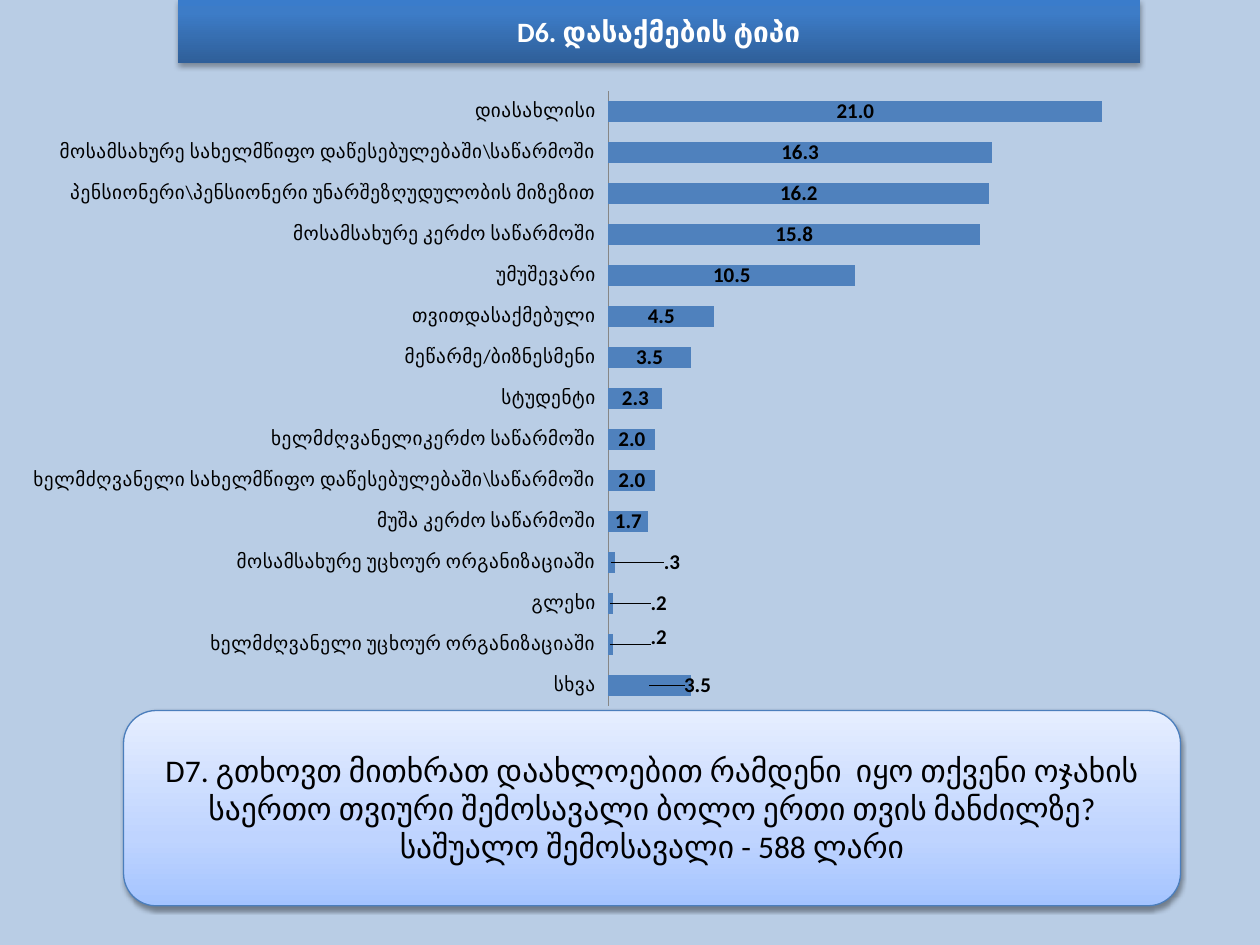
from lxml.etree import SubElement
from pptx import Presentation
from pptx.chart.data import CategoryChartData
from pptx.dml.color import RGBColor
from pptx.enum.chart import XL_CHART_TYPE, XL_LABEL_POSITION, XL_TICK_LABEL_POSITION, XL_TICK_MARK
from pptx.enum.shapes import MSO_SHAPE
from pptx.enum.text import MSO_ANCHOR, PP_ALIGN
from pptx.oxml import parse_xml
from pptx.oxml.ns import nsdecls, qn
from pptx.util import Pt

TITLE = "D6. დასაქმების ტიპი"
INCOME = [
    "D7. გთხოვთ მითხრათ დაახლოებით რამდენი  იყო თქვენი ოჯახის საერთო თვიური შემოსავალი ბოლო ერთი თვის მანძილზე?",
    "საშუალო შემოსავალი - 588 ლარი",
]
EMPLOYMENT = [
    ("სხვა", 3.5),
    ("ხელმძღვანელი უცხოურ ორგანიზაციაში", 0.2),
    ("გლეხი", 0.2),
    ("მოსამსახურე უცხოურ ორგანიზაციაში", 0.3),
    ("მუშა კერძო საწარმოში", 1.7),
    ("ხელმძღვანელი სახელმწიფო დაწესებულებაში\\საწარმოში", 2.0),
    ("ხელმძღვანელიკერძო საწარმოში", 2.0),
    ("სტუდენტი", 2.3),
    ("მეწარმე/ბიზნესმენი", 3.5),
    ("თვითდასაქმებული", 4.5),
    ("უმუშევარი", 10.5),
    ("მოსამსახურე კერძო საწარმოში", 15.8),
    ("პენსიონერი\\პენსიონერი უნარშეზღუდულობის მიზეზით", 16.2),
    ("მოსამსახურე სახელმწიფო დაწესებულებაში\\საწარმოში", 16.3),
    ("დიასახლისი", 21.0),
]
LABEL_SHIFTS = [(0.04, 0), (0.04, -0.01), (0.04, 0), (0.05, 0)]
PLOT_AREA = {"x": 0.49, "y": 0.02, "w": 0.49, "h": 0.96}
NUMBER_FORMAT = "####.0"
FONT = "Calibri"
COLORS = {
    "background": "B9CDE5", "bar": "4F81BD", "axis": "868686",
    "outline": "4B7EBC", "text": "000000", "title": "FFFFFF",
}
TITLE_GRADIENT = [(0, "2F5F99"), (80, "3D7CC7"), (100, "3A7CCB")]
INCOME_GRADIENT = [(0, "A4C4FF"), (35, "BFD4FF"), (100, "E6EEFF")]


def color(name):
    return RGBColor.from_string(COLORS[name])


def style_font(font, size, ink="text", bold=False):
    font.name, font.size, font.bold = FONT, Pt(size), bold
    font.color.rgb = color(ink)


def write(frame, paragraphs, **style):
    frame.word_wrap = True
    frame.vertical_anchor = MSO_ANCHOR.MIDDLE
    for index, words in enumerate(paragraphs):
        paragraph = frame.paragraphs[0] if index == 0 else frame.add_paragraph()
        paragraph.alignment = PP_ALIGN.CENTER
        run = paragraph.add_run()
        run.text = words
        style_font(run.font, **style)


def add_gradient(panel, stops):
    marks = "".join(
        f'<a:gs pos="{place * 1000}"><a:srgbClr val="{shade}"/></a:gs>' for place, shade in stops)
    panel.element.spPr.find(qn("a:prstGeom")).addnext(parse_xml(
        f'<a:gradFill {nsdecls("a")} rotWithShape="1"><a:gsLst>{marks}</a:gsLst>'
        '<a:lin ang="16200000" scaled="0"/></a:gradFill>'))


def add_shadow(panel, opacity, distance):
    panel.shadow.inherit = False
    effects = panel.element.spPr.find(qn("a:effectLst"))
    effects.append(parse_xml(
        f'<a:outerShdw {nsdecls("a")} blurRad="{Pt(3.1)}" dist="{Pt(distance)}" dir="5400000" '
        f'rotWithShape="0"><a:srgbClr val="000000"><a:alpha val="{opacity * 1000}"/>'
        '</a:srgbClr></a:outerShdw>'))


def manual_layout(**values):
    layout = parse_xml(f'<c:layout {nsdecls("c")}><c:manualLayout/></c:layout>')
    for key, value in values.items():
        SubElement(layout[0], qn(f"c:{key}"), val=str(value))
    return layout


def add_employment_chart(slide):
    data = CategoryChartData(number_format=NUMBER_FORMAT)
    data.categories = [category for category, share in EMPLOYMENT]
    data.add_series("Series 1", [share for category, share in EMPLOYMENT])
    chart = slide.shapes.add_chart(
        XL_CHART_TYPE.BAR_STACKED, Pt(11.5), Pt(44.6), Pt(686), Pt(366), data).chart
    chart.has_legend = chart.has_title = False
    style_font(chart.font, 11)

    categories = chart.category_axis
    categories.major_tick_mark = XL_TICK_MARK.NONE
    categories.tick_label_position = XL_TICK_LABEL_POSITION.LOW
    categories.format.line.color.rgb = color("axis")
    shares = chart.value_axis
    shares.minimum_scale, shares.maximum_scale = 0, 25
    shares.has_major_gridlines = shares.visible = False

    plot = chart.plots[0]
    plot.gap_width, plot.overlap, plot.vary_by_categories = 95, 100, False
    bars = plot.series[0]
    bars.format.fill.solid()
    bars.format.fill.fore_color.rgb = color("bar")
    labels = bars.data_labels
    labels.show_value = True
    labels.number_format, labels.number_format_is_linked = NUMBER_FORMAT, False
    style_font(labels.font, 12, bold=True)

    for index, (across, down) in enumerate(LABEL_SHIFTS):
        label = bars.points[index].data_label
        label.position = XL_LABEL_POSITION.CENTER
        style_font(label.font, 12, bold=True)
        order = bars._element.xpath(f"c:dLbls/c:dLbl/c:idx[@val='{index}']")[0]
        order.addnext(parse_xml(
            f'<c:numFmt {nsdecls("c")} formatCode="{NUMBER_FORMAT}" sourceLinked="0"/>'))
        order.addnext(manual_layout(x=across, y=down))

    area = chart._chartSpace.chart.plotArea
    for automatic in area.findall(qn("c:layout")):
        area.remove(automatic)
    area.insert(0, manual_layout(layoutTarget="inner", xMode="edge", yMode="edge", **PLOT_AREA))


def main():
    deck = Presentation()
    deck.slide_width, deck.slide_height = Pt(720), Pt(540)
    slide = deck.slides.add_slide(deck.slide_layouts[5])
    slide.background.fill.solid()
    slide.background.fill.fore_color.rgb = color("background")

    title = slide.shapes.title
    title.left, title.top, title.width, title.height = Pt(101.5), Pt(0), Pt(550), Pt(36)
    title.element.spPr.append(parse_xml(
        f'<a:prstGeom {nsdecls("a")} prst="roundRect"><a:avLst/></a:prstGeom>'))
    add_gradient(title, TITLE_GRADIENT)
    add_shadow(title, 35, 1.8)
    write(title.text_frame, [TITLE], size=16, ink="title", bold=True)

    add_employment_chart(slide)

    income = slide.shapes.add_shape(
        MSO_SHAPE.ROUNDED_RECTANGLE, Pt(70.6), Pt(406), Pt(604), Pt(111.6))
    add_gradient(income, INCOME_GRADIENT)
    income.line.color.rgb = color("outline")
    income.line.width = Pt(0.75)
    add_shadow(income, 38, 1.6)
    write(income.text_frame, INCOME, size=18)

    deck.save("out.pptx")


if __name__ == "__main__":
    main()
